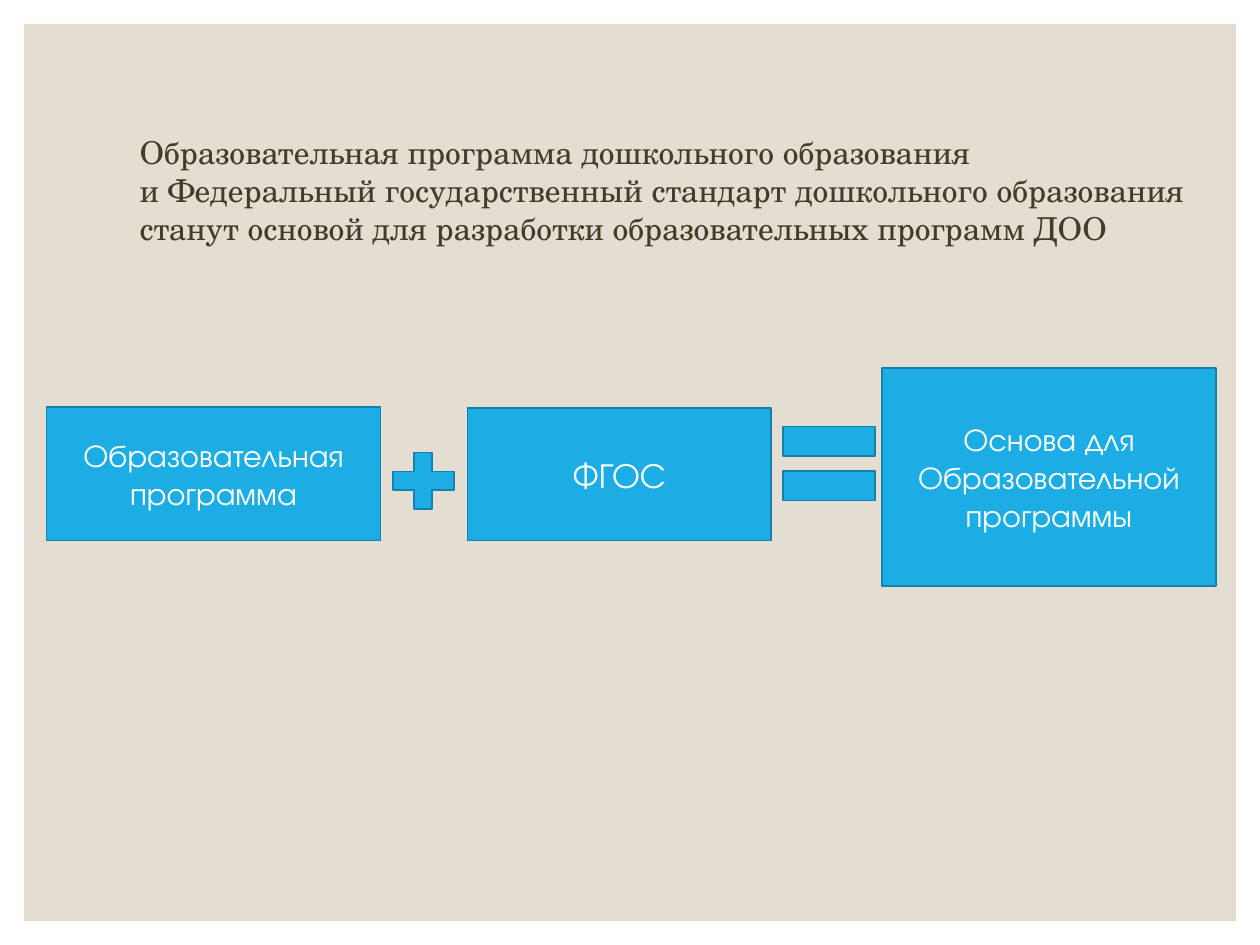
from pptx import Presentation
from pptx.dml.color import RGBColor
from pptx.enum.shapes import MSO_SHAPE as Shape
from pptx.enum.text import MSO_ANCHOR as Anchor, PP_ALIGN as Align
from pptx.util import Inches, Pt

PANEL, BLUE, BLUE_EDGE = "E3DED1", "1CADE4", "1580A9"
WHITE, BROWN = "FFFFFF", "443C29"
HEADING = [
    "Образовательная программа дошкольного образования",
    "и Федеральный государственный стандарт дошкольного образования",
    "станут основой для разработки образовательных программ ДОО",
]
# preset, (left, top, width, height), paragraphs, text size
EQUATION = [
    (Shape.RECTANGLE, (0.37, 3.23, 2.65, 1.06), ["Образовательная", "программа"], 18),
    (Shape.RECTANGLE, (3.71, 3.24, 2.41, 1.05), ["ФГОС"], 20),
    (Shape.RECTANGLE, (7, 2.92, 2.65, 1.73), ["Основа для Образовательной программы"], 18),
    (Shape.MATH_PLUS, (3.03, 3.51, 0.66, 0.61), [], 18),
    (Shape.MATH_EQUAL, (6.08, 3.18, 1, 1), [], 18),
]


def color(value):
    return RGBColor.from_string(value)


def add_figure(page, preset, place, fill, edge=None):
    figure = page.shapes.add_shape(preset, *map(Inches, place))
    figure.shadow.inherit = False
    figure.fill.solid()
    figure.fill.fore_color.rgb = color(fill)
    if edge:
        figure.line.color.rgb = color(edge)
        figure.line.width = Pt(1)
    else:
        figure.line.fill.background()
    return figure


def write(box, paragraphs, *, font, size, ink, align=Align.LEFT, anchor=Anchor.TOP, wrap=True):
    frame = box.text_frame
    frame.word_wrap = wrap
    frame.vertical_anchor = anchor
    for index, text in enumerate(paragraphs):
        para = frame.add_paragraph() if index else frame.paragraphs[0]
        para.alignment = align
        span = para.add_run()
        span.text = text
        span.font.name = font
        span.font.size = Pt(size)
        span.font.color.rgb = color(ink)


def main():
    deck = Presentation()
    deck.slide_width, deck.slide_height = Inches(10), Inches(7.5)
    page = deck.slides.add_slide(deck.slide_layouts[6])

    add_figure(page, Shape.RECTANGLE, (0.19, 0.19, 9.62, 7.12), PANEL)
    for preset, place, paragraphs, size in EQUATION:
        figure = add_figure(page, preset, place, BLUE, BLUE_EDGE)
        write(figure, paragraphs, font="TeX Gyre Adventor", size=size, ink=WHITE,
              align=Align.CENTER, anchor=Anchor.MIDDLE)

    heading = page.shapes.add_textbox(*map(Inches, (1.01, 1.01, 8.53, 1.01)))
    write(heading, HEADING, font="TeX Gyre Schola", size=18, ink=BROWN, wrap=False)
    deck.save("out.pptx")


if __name__ == "__main__":
    main()
